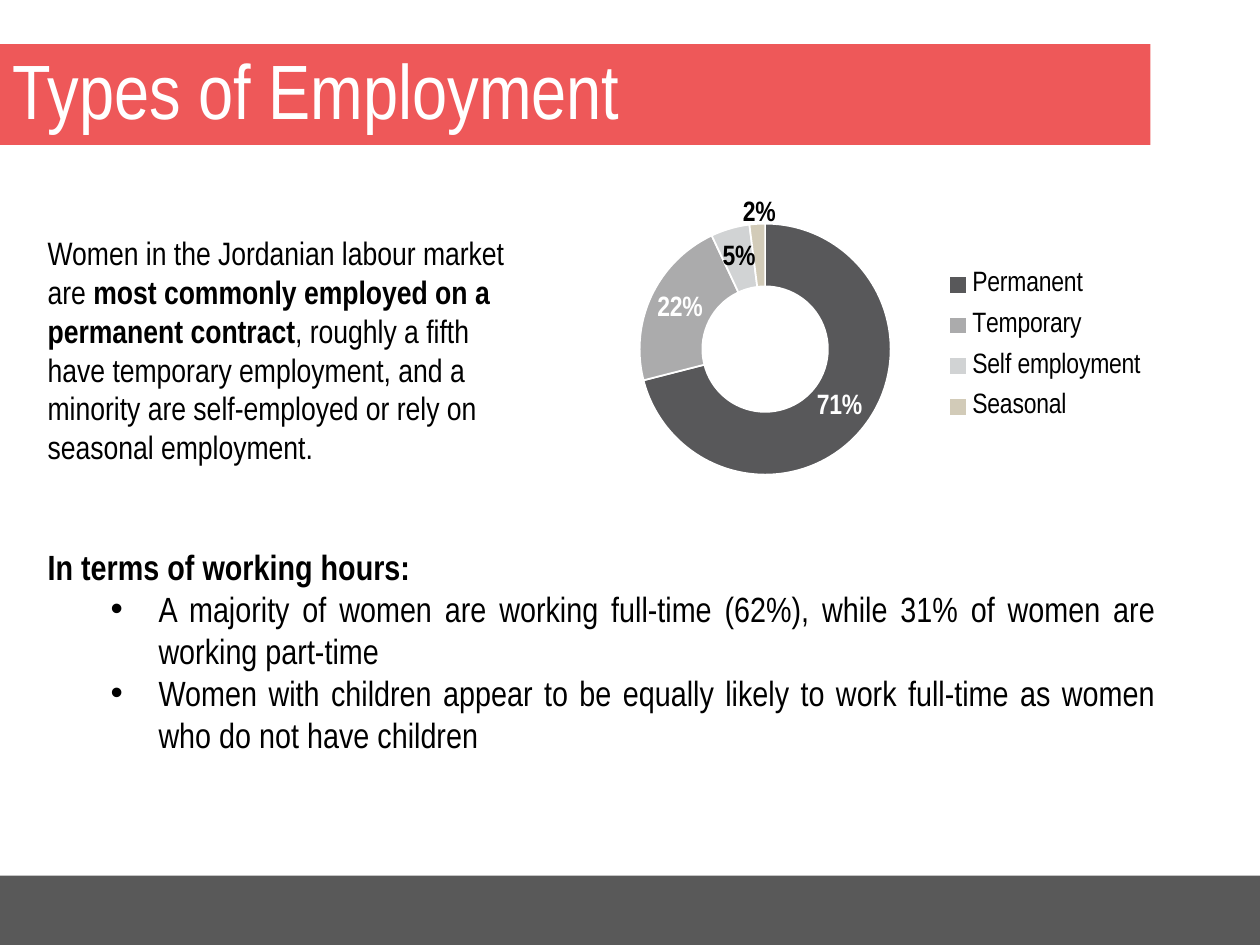
import pptx
import pptx.chart.data
import pptx.dml.color
import pptx.enum.chart
import pptx.enum.shapes
import pptx.enum.text
import pptx.oxml
import pptx.oxml.ns
import pptx.util

RGB = pptx.dml.color.RGBColor
CORAL = RGB(0xEE, 0x58, 0x59)
FOOTER = RGB(0x59, 0x59, 0x59)
CHARCOAL = RGB(0x58, 0x58, 0x5A)
SILVER = RGB(0xD1, 0xD3, 0xD4)
SAND = RGB(0xD2, 0xCB, 0xB8)
WHITE = RGB(0xFF, 0xFF, 0xFF)
BLACK = RGB(0, 0, 0)
FONT = "Arial Narrow"
ALIGN = pptx.enum.text.PP_ALIGN
ANCHOR = pptx.enum.text.MSO_ANCHOR
NS = pptx.oxml.ns.nsdecls
UNIT = pptx.util.Inches(0.1)  # grid of 100 columns by 75 rows


def set_font(font, size, color=BLACK, bold=False):
    font.name, font.size, font.bold = FONT, pptx.util.Pt(size), bold
    font.color.rgb = color


def add_text(p, text, size=20, color=BLACK, bold=False):
    r = p.add_run()
    r.text = text
    set_font(r.font, size, color, bold)


def manual_layout(target="", **places):
    """Chart layout element; places are shares of the chart or offsets."""
    inner = f'<c:layoutTarget val="{target}"/>' if target else ""
    if "w" in places:
        inner += '<c:xMode val="edge"/><c:yMode val="edge"/>'
    inner += "".join(f'<c:{k} val="{v}"/>' for k, v in places.items())
    return pptx.oxml.parse_xml(
        f'<c:layout {NS("c")}><c:manualLayout>{inner}</c:manualLayout></c:layout>')


class SlideBuilder:
    def __init__(self, prs):
        self.slide = prs.slides.add_slide(prs.slide_layouts[6])

    def box(self, *place):
        return [round(n * UNIT) for n in place]

    def bar(self, place, color):
        sp = self.slide.shapes.add_shape(
            pptx.enum.shapes.MSO_SHAPE.RECTANGLE, *self.box(*place))
        sp.shadow.inherit = False
        sp.fill.solid()
        sp.fill.fore_color.rgb = color
        sp.line.fill.background()
        return sp

    def title(self, place, text):
        tf = self.bar(place, CORAL).text_frame
        tf.word_wrap = True
        tf.vertical_anchor = ANCHOR.MIDDLE
        p = tf.paragraphs[0]
        p.alignment, p.line_spacing = ALIGN.LEFT, 0.9
        add_text(p, text, size=44, color=WHITE)

    def text_box(self, place):
        tf = self.slide.shapes.add_textbox(*self.box(*place)).text_frame
        tf.word_wrap = True
        return tf

    def bullet(self, tf, text):
        p = tf.add_paragraph()
        p.level, p.alignment = 1, ALIGN.JUSTIFY
        pPr = p._p.get_or_add_pPr()
        pPr.set("marL", str(pptx.util.Inches(0.88)))
        pPr.set("indent", str(pptx.util.Inches(-0.38)))
        for tag in ('buFont {} typeface="Arial"', 'buChar {} char="•"'):
            pPr.append(pptx.oxml.parse_xml(f'<a:{tag.format(NS("a"))}/>'))
        add_text(p, text)

    def doughnut(self, place, shares, colors):
        data = pptx.chart.data.CategoryChartData(number_format="###0%")
        data.categories = list(shares)
        data.add_series("Series 1", list(shares.values()))
        chart = self.slide.shapes.add_chart(
            pptx.enum.chart.XL_CHART_TYPE.DOUGHNUT, *self.box(*place), data).chart
        chart.has_title = False
        set_font(chart.font, 10)
        plot = chart.plots[0]
        plot.vary_by_categories = True  # one legend entry per category
        plot._element.xpath("c:holeSize")[0].set("val", "40")
        area = chart._chartSpace.xpath("c:chart/c:plotArea")[0]
        for old in area.xpath("c:layout"):
            area.remove(old)
        area.insert(0, manual_layout("inner", x=0.15, y=0.1, w=0.39, h=0.86))

        # Legend
        chart.has_legend = True
        legend = chart.legend
        legend.position = pptx.enum.chart.XL_LEGEND_POSITION.RIGHT
        legend.include_in_layout = False
        set_font(legend.font, 16)
        for old in legend._element.xpath("c:layout"):
            legend._element.remove(old)
        legend._element.xpath("c:legendPos")[0].addnext(
            manual_layout(x=0.6, y=0.26, w=0.36, h=0.52))

        # Slices and their labels
        series = plot.series[0]
        labels = series.data_labels
        labels.show_value = True
        labels.show_percentage = False
        labels.number_format, labels.number_format_is_linked = "###0%", False
        set_font(labels.font, 16, WHITE, bold=True)
        for i, (color, alpha) in enumerate(colors):
            fmt = series.points[i].format
            fmt.fill.solid()
            fmt.fill.fore_color.rgb = color
            fmt.line.color.rgb = WHITE
            fmt.line.width = pptx.util.Pt(1)
            if alpha < 100:
                clr = fmt.fill._xPr.xpath("a:solidFill/a:srgbClr")[0]
                clr.append(pptx.oxml.parse_xml(
                    f'<a:alpha {NS("a")} val="{alpha * 1000}"/>'))
        for i in (2, 3):
            set_font(series.points[i].data_label.font, 16, bold=True)
        # The narrowest slice carries its label above the ring
        last = series._element.xpath("c:dLbls/c:dLbl[c:idx/@val='3']/c:idx")[0]
        last.addnext(manual_layout(x=0, y=-0.12))


def main():
    prs = pptx.Presentation()
    prs.slide_width, prs.slide_height = 100 * UNIT, 75 * UNIT
    s = SlideBuilder(prs)

    # Footer and title bars
    s.bar((0, 69.5, 100, 5.5), FOOTER)
    s.title((0, 3.5, 91.3, 8), "Types of Employment")

    # Summary of contract types
    p = s.text_box((2.8, 18, 40.3, 20.9)).paragraphs[0]
    for text, bold in (
            ("Women in the Jordanian labour market are ", False),
            ("most commonly employed on a permanent contract", True),
            (", roughly a fifth have temporary employment, and a minority are "
             "self-employed or rely on seasonal employment.", False)):
        add_text(p, text, size=18.5, bold=bold)

    # Working hours
    tf = s.text_box((2.8, 42.8, 89.9, 17.8))
    tf.paragraphs[0].alignment = ALIGN.JUSTIFY
    add_text(tf.paragraphs[0], "In terms of working hours:", bold=True)
    s.bullet(tf, "A majority of women are working full-time (62%), while 31% of "
                 "women are working part-time")
    s.bullet(tf, "Women with children appear to be equally likely to work "
                 "full-time as women who do not have children")

    # Contract types chart
    s.doughnut((43.1, 13.3, 51.1, 27.2),
               {"Permanent": 0.71, "Temporary": 0.22,
                "Self employment": 0.05, "Seasonal": 0.02},
               ((CHARCOAL, 100), (CHARCOAL, 50), (SILVER, 100), (SAND, 100)))
    prs.save("out.pptx")


if __name__ == "__main__":
    main()
